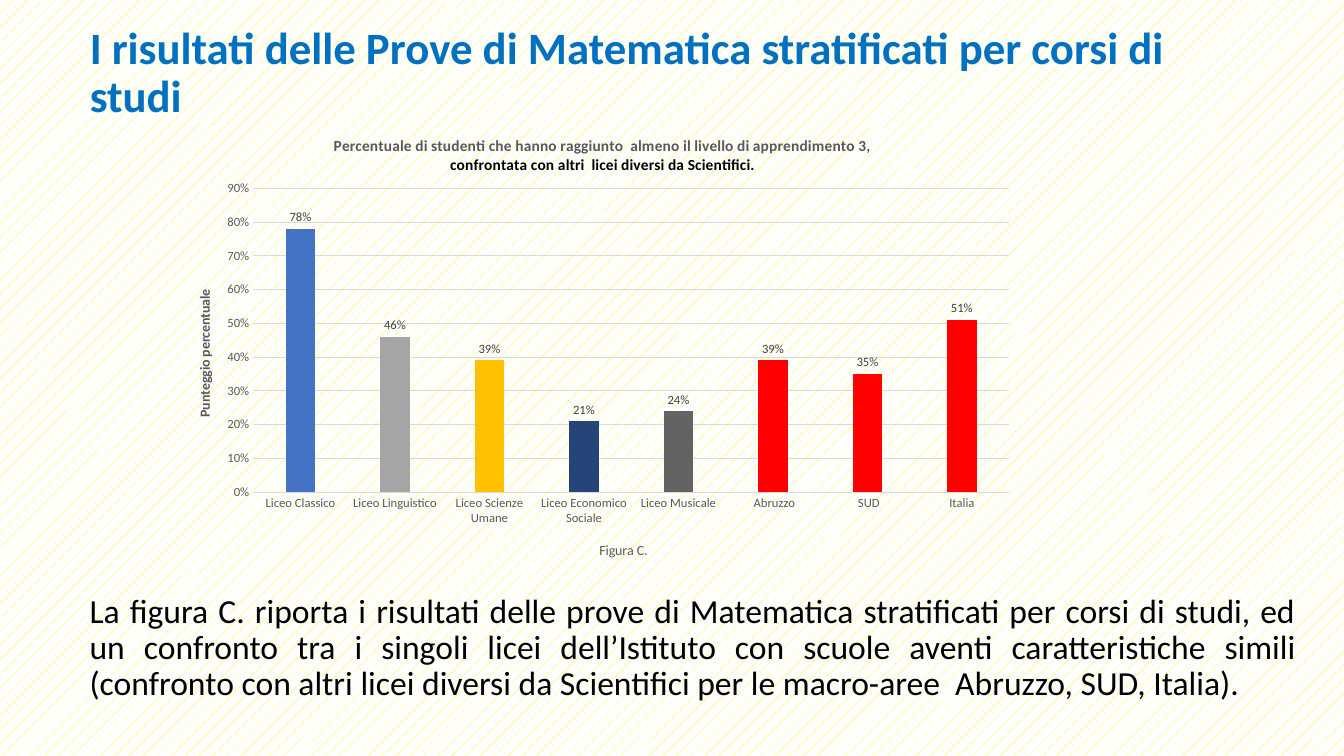
from lxml.etree import SubElement
from pptx import Presentation
from pptx.chart.data import CategoryChartData
from pptx.dml.color import RGBColor
from pptx.enum.chart import XL_CHART_TYPE, XL_LABEL_POSITION, XL_TICK_MARK
from pptx.enum.dml import MSO_PATTERN
from pptx.enum.text import MSO_ANCHOR, MSO_AUTO_SIZE, PP_ALIGN
from pptx.oxml.ns import qn
from pptx.util import Inches, Pt

COLORS = {
    "black": "000000", "white": "FFFFFF", "yellow": "FFFF00", "heading": "0070C0",
    "axis": "595959", "label": "404040", "grid": "D9D9D9",
    "blue": "4472C4", "gray": "A5A5A5", "gold": "FFC000",
    "navy": "264478", "slate": "636363", "red": "FF0000",
}


def color(name):
    return RGBColor.from_string(COLORS[name])


def write(frame, text, size, fill="black", bold=False, align=None, spacing=None, layout=None):
    fills = fill if isinstance(fill, list) else [fill]
    lines = text.split("\n")
    for index, line in enumerate(lines):
        paragraph = frame.paragraphs[0] if index == 0 else frame.add_paragraph()
        paragraph.alignment = align
        paragraph.line_spacing = spacing
        run = paragraph.add_run()
        run.text = line
        run.font.name = "Calibri"
        run.font.size = Pt(size)
        run.font.bold = bold
        run.font.color.rgb = color(fills[min(index, len(fills) - 1)])
    if layout is not None:
        element, sizes = layout
        for old in element.findall(qn("c:layout")):
            element.remove(old)
        holder = SubElement(element, qn("c:layout"))
        text_element = element.find(qn("c:tx"))
        text_element.addnext(holder)
        manual = SubElement(holder, qn("c:manualLayout"))
        for tag, value in zip(("xMode", "yMode", "x", "y"), ("edge", "edge", *sizes)):
            SubElement(manual, qn(f"c:{tag}")).set("val", str(value))


presentation = Presentation()
presentation.slide_width = Inches(13.33)
presentation.slide_height = Inches(7.5)
slide = presentation.slides.add_slide(presentation.slide_layouts[5])

background = slide.background.fill
background.patterned()
background.pattern = MSO_PATTERN.PERCENT_5
background.fore_color.rgb = color("yellow")
background.back_color.rgb = color("white")

heading = slide.shapes.title
heading.left, heading.top = Inches(0.79), Inches(0.19)
heading.width, heading.height = Inches(11.5), Inches(1.09)
comment = slide.shapes.add_textbox(Inches(0.79), Inches(5.71), Inches(12.16), Inches(1.45))
for shape in (heading, comment):
    shape.text_frame.word_wrap = True
    shape.text_frame.auto_size = MSO_AUTO_SIZE.NONE
    shape.text_frame.vertical_anchor = MSO_ANCHOR.MIDDLE

write(heading.text_frame, "I risultati delle Prove di Matematica stratificati per corsi di studi",
      size=32, fill="heading", bold=True, align=PP_ALIGN.LEFT, spacing=0.9)
write(comment.text_frame,
      "La figura C. riporta i risultati delle prove di Matematica stratificati per corsi di studi, "
      "ed un confronto tra i singoli licei dell’Istituto con scuole aventi caratteristiche simili "
      "(confronto con altri licei diversi da Scientifici per le macro-aree  Abruzzo, SUD, Italia).",
      size=24, align=PP_ALIGN.JUSTIFY, spacing=0.9)

results = [
    ("Liceo Classico", 0.78, "blue"),
    ("Liceo Linguistico", 0.46, "gray"),
    ("Liceo Scienze Umane", 0.39, "gold"),
    ("Liceo Economico Sociale", 0.21, "navy"),
    ("Liceo Musicale", 0.24, "slate"),
    (" Abruzzo", 0.39, "red"),
    (" SUD", 0.35, "red"),
    ("Italia", 0.51, "red"),
]
chart_data = CategoryChartData(number_format="0%")
chart_data.categories = [school for school, share, fill in results]
chart_data.add_series("Series 1", [share for school, share, fill in results])
chart = slide.shapes.add_chart(XL_CHART_TYPE.COLUMN_CLUSTERED, Inches(1.66), Inches(1.08),
                               Inches(8.52), Inches(4.64), chart_data).chart
chart.has_legend = False
chart.font.name = "Calibri"
chart.font.size = Pt(10)
chart.font.color.rgb = color("black")

chart.has_title = True
title = chart.chart_title
title.include_in_layout = False
write(title.text_frame,
      "Percentuale di studenti che hanno raggiunto  almeno il livello di apprendimento 3,\n"
      "confrontata con altri  licei diversi da Scientifici.",
      size=11, fill=["axis", "black"], bold=True, layout=(title._element, (0.19, 0.05)))

axes = [
    (chart.category_axis, "Figura C.", False, (0.5, 0.92)),
    (chart.value_axis, "Punteggio percentuale", True, (0.03, 0.38)),
]
for axis, caption, bold, position in axes:
    axis.major_tick_mark = XL_TICK_MARK.NONE
    axis.minor_tick_mark = XL_TICK_MARK.NONE
    axis.tick_labels.font.name = "Calibri"
    axis.tick_labels.font.size = Pt(9)
    axis.tick_labels.font.color.rgb = color("axis")
    axis.has_title = True
    write(axis.axis_title.text_frame, caption, size=10, fill="axis", bold=bold,
          layout=(axis.axis_title._element, position))

value_axis = chart.value_axis
value_axis.axis_title.text_frame._txBody.bodyPr.set("rot", "-5400000")
value_axis.axis_title.text_frame._txBody.bodyPr.set("vert", "horz")
value_axis.minimum_scale, value_axis.maximum_scale, value_axis.major_unit = 0, 0.9, 0.1
value_axis.tick_labels.number_format = "0%"
value_axis.tick_labels.number_format_is_linked = False
value_axis.format.line.fill.background()
for line in (chart.category_axis.format.line, value_axis.major_gridlines.format.line):
    line.color.rgb = color("grid")
    line.width = Pt(0.75)

plot = chart.plots[0]
plot.gap_width = 219
plot.overlap = -27
plot.vary_by_categories = False
series = plot.series[0]
for index, (school, share, fill) in enumerate(results):
    bar = series.points[index].format.fill
    bar.solid()
    bar.fore_color.rgb = color(fill)

labels = series.data_labels
labels.show_value = True
labels.position = XL_LABEL_POSITION.OUTSIDE_END
labels.number_format = "0%"
labels.number_format_is_linked = False
labels.font.name = "Calibri"
labels.font.size = Pt(9)
labels.font.color.rgb = color("label")

plot_area = chart._chartSpace.chart.plotArea
for old in plot_area.findall(qn("c:layout")):
    plot_area.remove(old)
plot_layout = SubElement(plot_area, qn("c:layout"))
plot_area.insert(0, plot_layout)
manual_layout = SubElement(plot_layout, qn("c:manualLayout"))
for tag, value in (("layoutTarget", "inner"), ("xMode", "edge"), ("yMode", "edge"),
                   ("x", 0.1), ("y", 0.17), ("w", 0.88), ("h", 0.65)):
    SubElement(manual_layout, qn(f"c:{tag}")).set("val", str(value))

presentation.save("out.pptx")
